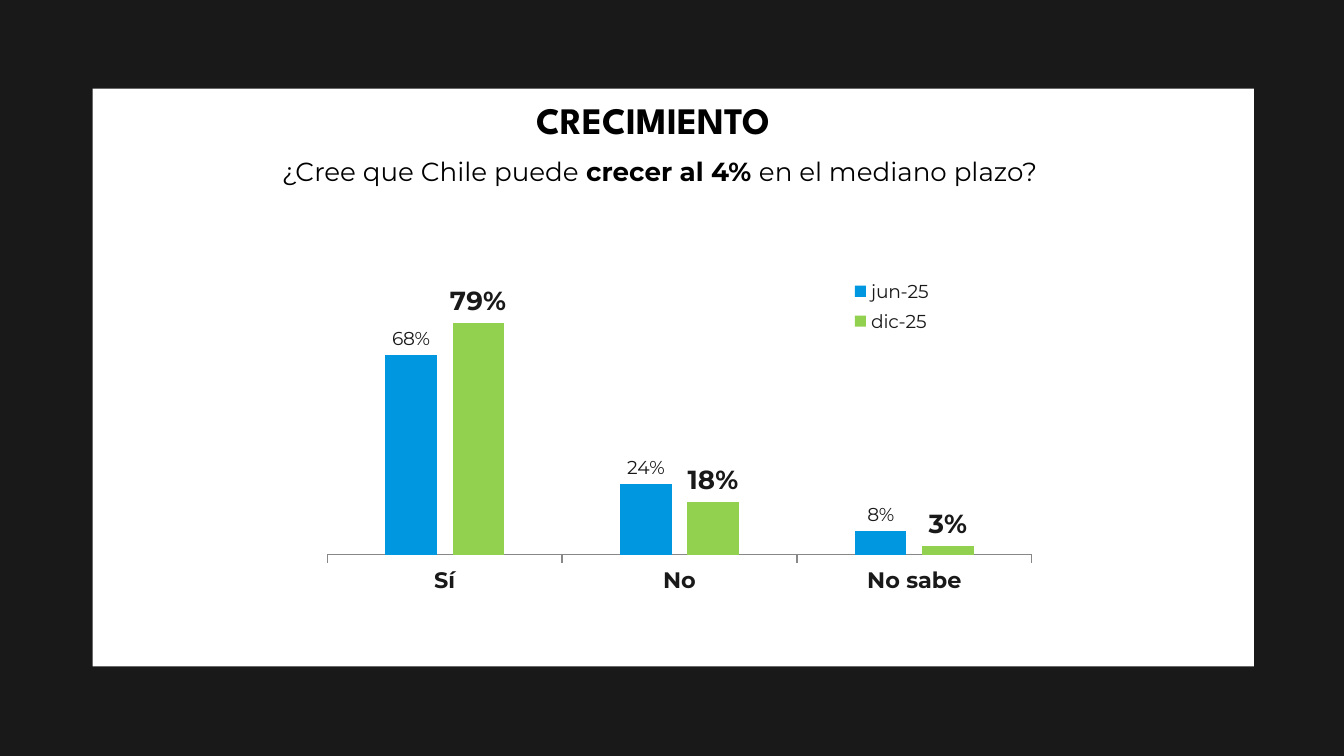
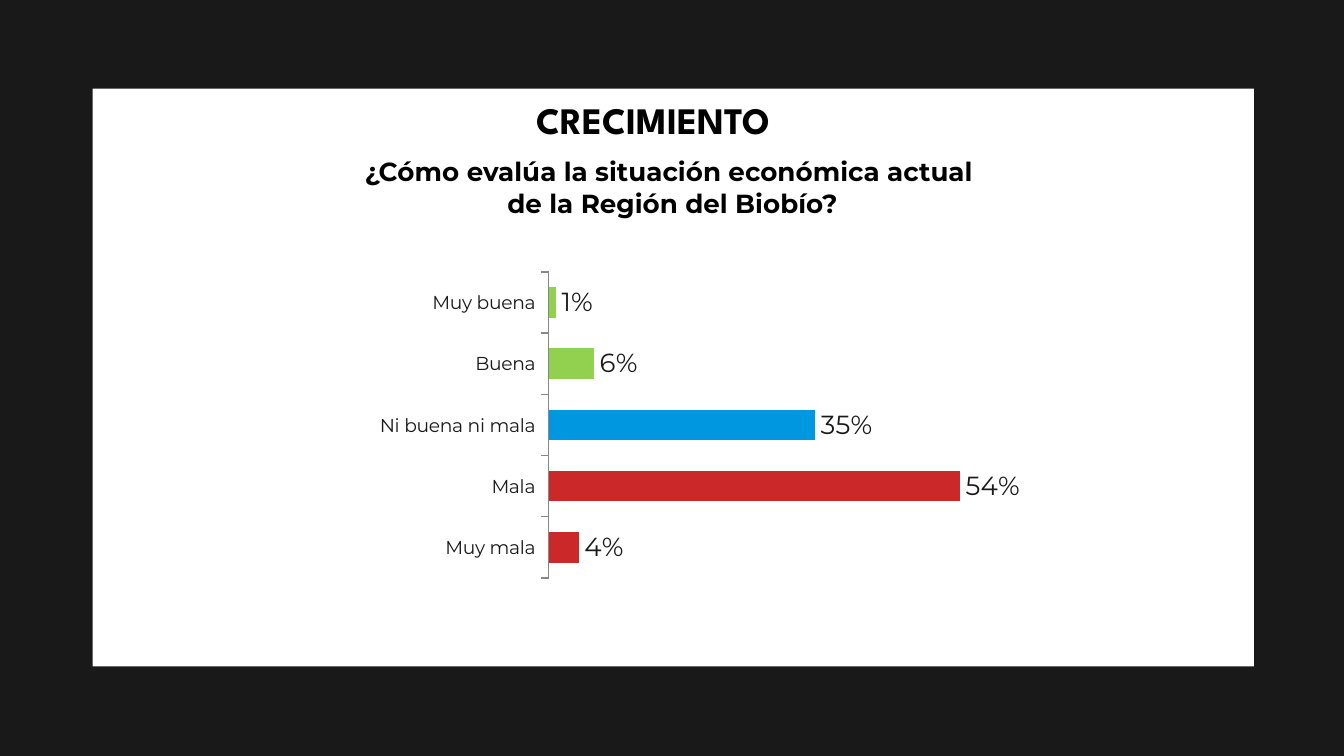
from lxml import etree
from pptx import Presentation
from pptx.chart.data import CategoryChartData
from pptx.dml.color import RGBColor
from pptx.enum.chart import XL_CHART_TYPE, XL_LABEL_POSITION, XL_LEGEND_POSITION, XL_TICK_MARK
from pptx.enum.shapes import MSO_SHAPE
from pptx.enum.text import MSO_ANCHOR, MSO_AUTO_SIZE, PP_ALIGN
from pptx.oxml.ns import qn
from pptx.util import Inches, Pt

COLUMNS = XL_CHART_TYPE.COLUMN_CLUSTERED
BARS = XL_CHART_TYPE.BAR_CLUSTERED
OUTSIDE_END = XL_LABEL_POSITION.OUTSIDE_END
LEGEND_RIGHT = XL_LEGEND_POSITION.RIGHT
TICK_OUT, TICK_NONE = XL_TICK_MARK.OUTSIDE, XL_TICK_MARK.NONE
RECTANGLE = MSO_SHAPE.RECTANGLE
TOP = MSO_ANCHOR.TOP
GROW = MSO_AUTO_SIZE.SHAPE_TO_FIT_TEXT
LEFT, CENTER = PP_ALIGN.LEFT, PP_ALIGN.CENTER

COLORS = {
    "backdrop": "191919",
    "panel": "FFFFFF",
    "heading": "000000",
    "chart_text": "191919",
    "axis": "888888",
    "blue": "0097E1",
    "green": "92D050",
    "red": "CB2929",
}
HEADING_FONT, TEXT_FONT, CHART_FONT = "League Spartan", "Montserrat", "Arial"
SLIDE_WIDTH = Inches(10)
SLIDE_HEIGHT = SLIDE_WIDTH * 9 // 16
TITLE_ONLY = 5


def color(name):
    return RGBColor.from_string(COLORS[name])


def set_font(font, size, face=TEXT_FONT, bold=False, tint="chart_text"):
    font.size, font.name, font.bold = Pt(size), face, bold
    font.color.rgb = color(tint)


def write(frame, lines, align=LEFT, **style):
    frame.word_wrap = True
    frame.auto_size = GROW
    frame.vertical_anchor = TOP
    for index, line in enumerate(lines):
        paragraph = frame.add_paragraph() if index else frame.paragraphs[0]
        paragraph.alignment = align
        for text, bold in line:
            run = paragraph.add_run()
            run.text = text
            set_font(run.font, bold=bold, tint="heading", **style)


def place(parent, position, x, y, w, h, inner=False):
    for previous in parent.findall(qn("c:layout")):
        parent.remove(previous)
    layout = etree.Element(qn("c:layout"))
    manual = etree.SubElement(layout, qn("c:manualLayout"))
    values = {"layoutTarget": "inner"} if inner else {}
    values.update(xMode="edge", yMode="edge", x=x, y=y, w=w, h=h)
    for tag, value in values.items():
        etree.SubElement(manual, qn(f"c:{tag}")).set("val", str(value))
    parent.insert(position, layout)


class Deck:
    def __init__(self):
        self.presentation = Presentation()
        self.presentation.slide_width = SLIDE_WIDTH
        self.presentation.slide_height = SLIDE_HEIGHT
        backdrop = self.presentation.slide_master.background.fill
        backdrop.solid()
        backdrop.fore_color.rgb = color("backdrop")
        self.slide = None

    def new_slide(self, title_width):
        layout = self.presentation.slide_layouts[TITLE_ONLY]
        self.slide = self.presentation.slides.add_slide(layout)
        self.panel()
        self.title(title_width)

    def panel(self):
        panel = self.slide.shapes.add_shape(
            RECTANGLE, Inches(0.69), Inches(0.66), Inches(8.64), Inches(4.3))
        panel.shadow.inherit = False
        panel.fill.solid()
        panel.fill.fore_color.rgb = color("panel")
        panel.line.fill.background()
        self.slide.shapes.title.element.addprevious(panel.element)

    def title(self, width):
        title = self.slide.shapes.title
        title.left, title.top = Inches(3.89), Inches(0.67)
        title.width, title.height = Inches(width), Inches(0.44)
        write(title.text_frame, [[("CRECIMIENTO", True)]], size=20, face=HEADING_FONT)

    def question(self, left, width, height, lines, align=LEFT):
        box = self.slide.shapes.add_textbox(
            Inches(left), Inches(1.11), Inches(width), Inches(height))
        write(box.text_frame, lines, align=align, size=14)

    def chart(self, kind, top, height, categories, series, plot_area, maximum,
              gap, overlap, category_size, category_bold=False):
        data = CategoryChartData(number_format="0%")
        data.categories = categories
        for name, values, _, _, _ in series:
            data.add_series(name, values)
        chart = self.slide.shapes.add_chart(
            kind, Inches(2.27), Inches(top), Inches(5.49), Inches(height), data).chart
        chart.has_title = False
        chart.has_legend = False
        set_font(chart.font, 18, CHART_FONT)

        plot = chart.plots[0]
        plot.vary_by_categories = False
        plot.gap_width, plot.overlap = gap, overlap
        for bars, (_, _, tint, label_size, label_bold) in zip(plot.series, series):
            bars.invert_if_negative = False
            bars.format.fill.solid()
            bars.format.fill.fore_color.rgb = color(tint)
            labels = bars.data_labels
            labels.show_value = True
            labels.number_format = "0%"
            labels.number_format_is_linked = False
            labels.position = OUTSIDE_END
            set_font(labels.font, label_size, bold=label_bold)

        answers, shares = chart.category_axis, chart.value_axis
        answers.has_major_gridlines = False
        answers.major_tick_mark, answers.minor_tick_mark = TICK_OUT, TICK_NONE
        answers.format.line.color.rgb = color("axis")
        answers.format.line.width = Pt(0.75)
        set_font(answers.tick_labels.font, category_size, bold=category_bold)
        shares.has_major_gridlines = False
        shares.minimum_scale, shares.maximum_scale = 0, maximum
        shares.visible = False
        place(chart.element.chart.plotArea, 0, *plot_area, inner=True)
        return chart

    def legend(self, chart, *area):
        chart.has_legend = True
        legend = chart.legend
        legend.position = LEGEND_RIGHT
        legend.include_in_layout = False
        set_font(legend.font, 10)
        place(chart.element.chart.find(qn("c:legend")), 1, *area)

    def color_points(self, chart, tints):
        points = chart.plots[0].series[0].points
        for index, tint in tints.items():
            fill = points[index].format.fill
            fill.solid()
            fill.fore_color.rgb = color(tint)


def growth_outlook(deck):
    deck.new_slide(title_width=2.22)
    outlook = deck.chart(
        COLUMNS, 1.63, 3.33, ["Sí", "No", "No sabe"],
        [("jun-25", [0.68, 0.24, 0.08], "blue", 10, False),
         ("dic-25", [0.79, 0.18, 0.03], "green", 14, True)],
        plot_area=(0.03, 0.16, 0.955, 0.59), maximum=0.9,
        gap=226, overlap=-31, category_size=12, category_bold=True)
    deck.legend(outlook, 0.72, 0.12, 0.15, 0.15)
    deck.question(2, 5.86, 0.34, [[
        ("¿Cree que Chile puede ", False),
        ("crecer al 4% ", True),
        ("en el mediano plazo?", False)]])


def regional_economy(deck):
    deck.new_slide(title_width=2.54)
    ratings = deck.chart(
        BARS, 1.87, 2.56,
        ["Muy buena", "Buena", "Ni buena ni mala", "Mala", "Muy mala"],
        [("Series 1", [0.01, 0.06, 0.35, 0.54, 0.04], "blue", 14, False)],
        plot_area=(0.33, 0.06, 0.62, 0.89), maximum=0.6,
        gap=100, overlap=30, category_size=10)
    ratings.category_axis.reverse_order = True
    deck.color_points(ratings, {0: "green", 1: "green", 3: "red", 4: "red"})
    deck.question(1.48, 7.05, 0.57, [
        [("¿Cómo evalúa la situación económica actual ", True)],
        [("de la Región del Biobío?", True)]], align=CENTER)


def main():
    deck = Deck()
    growth_outlook(deck)
    regional_economy(deck)
    deck.presentation.save("out.pptx")


if __name__ == "__main__":
    main()
